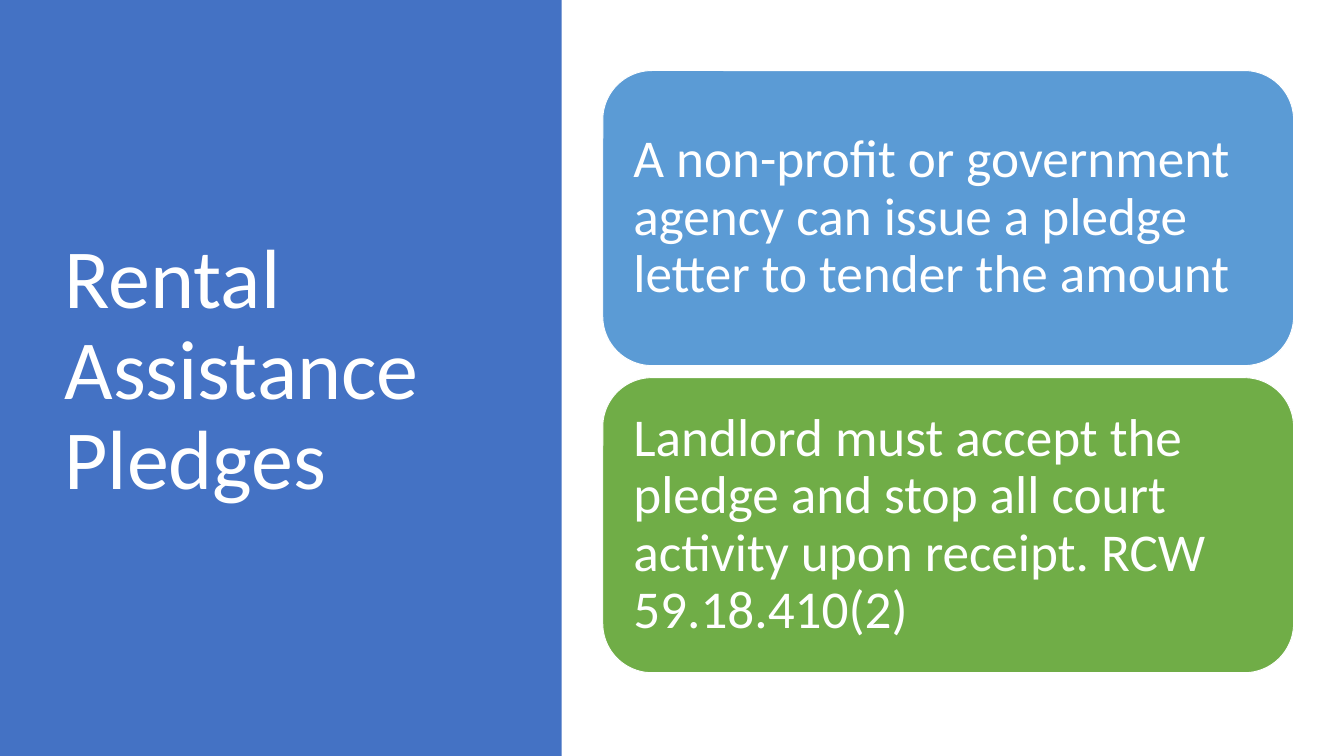
import pptx
import pptx.dml.color
import pptx.enum.shapes
import pptx.enum.text
import pptx.util

RGBColor = pptx.dml.color.RGBColor
Shapes = pptx.enum.shapes.MSO_SHAPE

WHITE = RGBColor(0xFF, 0xFF, 0xFF)
PANEL_BLUE = RGBColor(0x44, 0x72, 0xC4)
CARD_BLUE = RGBColor(0x5B, 0x9B, 0xD5)
CARD_GREEN = RGBColor(0x70, 0xAD, 0x47)

EMU_PER_PX = 9144  # 100 px to the inch
SLIDE_WIDTH, SLIDE_HEIGHT = 2000, 1125

CARD_LEFT, CARD_TOP = 897, 105
CARD_WIDTH, CARD_HEIGHT, CARD_GAP = 1028, 439, 18
CARDS = [
    ("A non-profit or government agency can issue a pledge letter to tender the amount", CARD_BLUE),
    ("Landlord must accept the pledge and stop all court activity upon receipt. RCW 59.18.410(2)",
     CARD_GREEN),
]


def px(length):
    return pptx.util.Emu(length * EMU_PER_PX)


class SlideBuilder:
    font = "Calibri"
    title_size = 90
    card_size = 57
    card_inset = 24

    def __init__(self, slide):
        self.slide = slide

    def set_text(self, shape, text, size, inset):
        frame = shape.text_frame
        frame.text = text
        frame.word_wrap = True
        frame.auto_size = pptx.enum.text.MSO_AUTO_SIZE.NONE
        frame.vertical_anchor = pptx.enum.text.MSO_ANCHOR.MIDDLE
        frame.margin_left = frame.margin_right = px(inset)
        frame.margin_top = frame.margin_bottom = px(inset)
        paragraph = frame.paragraphs[0]
        paragraph.alignment = pptx.enum.text.PP_ALIGN.LEFT
        paragraph.line_spacing = 0.9
        font = paragraph.runs[0].font
        font.name = self.font
        font.size = pptx.util.Pt(size)
        font.color.rgb = WHITE

    def block(self, kind, left, top, width, height, fill):
        shape = self.slide.shapes.add_shape(kind, px(left), px(top), px(width), px(height))
        shape.shadow.inherit = False
        shape.fill.solid()
        shape.fill.fore_color.rgb = fill
        shape.line.fill.background()
        return shape

    def panel(self, left, top, width, height, fill):
        """Add a plain rectangle behind everything else on the slide."""
        shape = self.block(Shapes.RECTANGLE, left, top, width, height, fill)
        self.slide.shapes.element.insert(2, shape.element)

    def title(self, text, left, top, width, height):
        title = self.slide.shapes.title
        title.left, title.top = px(left), px(top)
        title.width, title.height = px(width), px(height)
        self.set_text(title, text, self.title_size, 10)

    def card(self, text, left, top, width, height, fill):
        shape = self.block(Shapes.ROUNDED_RECTANGLE, left, top, width, height, fill)
        shape.line.color.rgb = WHITE
        shape.line.width = pptx.util.Pt(1)
        self.set_text(shape, text, self.card_size, self.card_inset)


def main():
    presentation = pptx.Presentation()
    presentation.slide_width = px(SLIDE_WIDTH)
    presentation.slide_height = px(SLIDE_HEIGHT)
    title_only = presentation.slide_layouts[5]
    builder = SlideBuilder(presentation.slides.add_slide(title_only))

    builder.panel(0, 0, 836, SLIDE_HEIGHT, PANEL_BLUE)
    builder.title("Rental Assistance Pledges", 86, 102, 625, 903)
    for index, (text, fill) in enumerate(CARDS):
        top = CARD_TOP + index * (CARD_HEIGHT + CARD_GAP)
        builder.card(text, CARD_LEFT, top, CARD_WIDTH, CARD_HEIGHT, fill)

    presentation.save("out.pptx")


if __name__ == "__main__":
    main()
